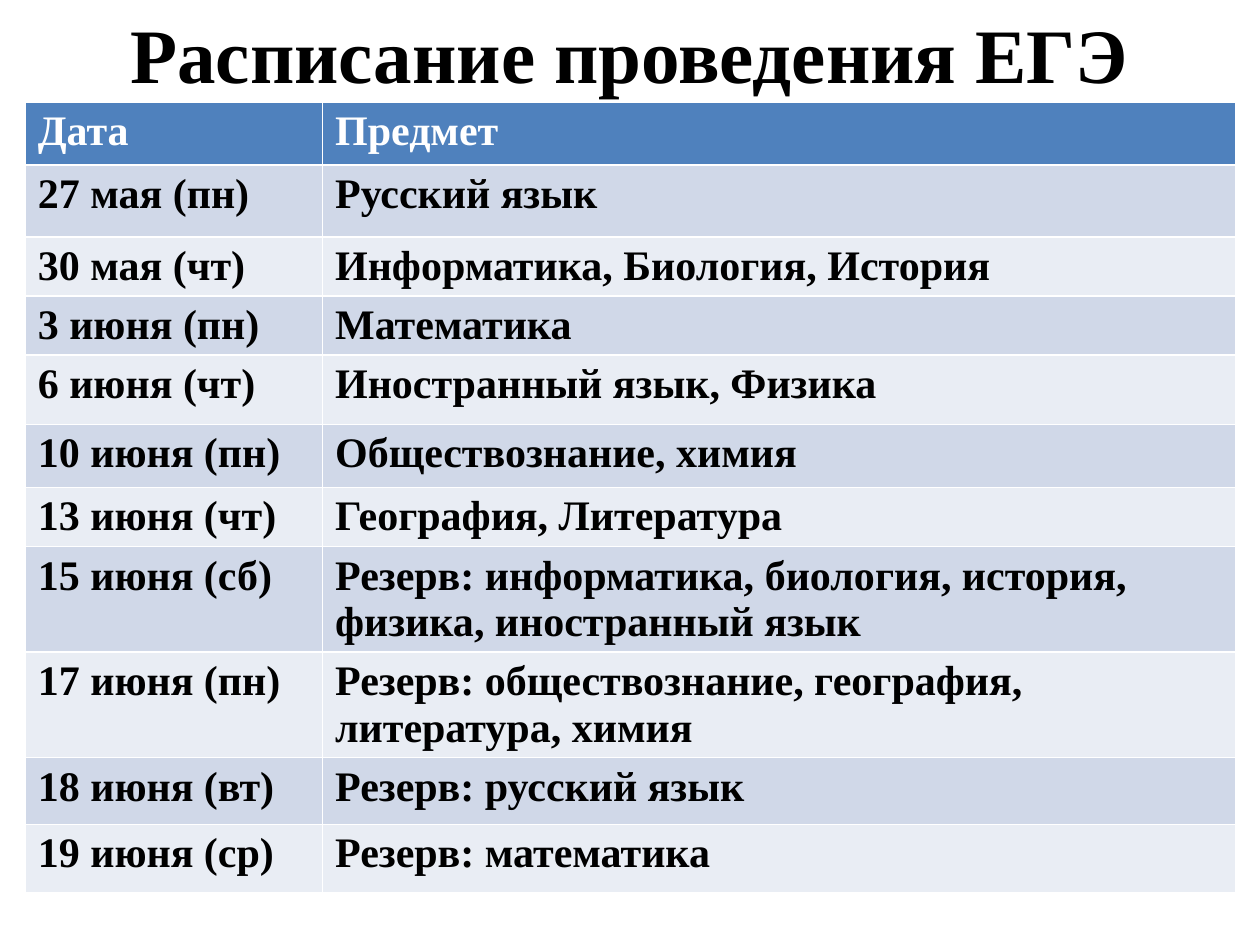
from typing import NamedTuple

from pptx import Presentation
from pptx.dml.color import RGBColor
from pptx.enum.text import MSO_ANCHOR, PP_ALIGN
from pptx.util import Inches, Pt

BLACK = RGBColor(0x00, 0x00, 0x00)
WHITE = RGBColor(0xFF, 0xFF, 0xFF)
BLUE = RGBColor(0x4F, 0x81, 0xBD)
BANDS = (RGBColor(0xE9, 0xED, 0xF4), RGBColor(0xD0, 0xD8, 0xE8))
FACE = {"name": "Times New Roman", "bold": True}


class Exam(NamedTuple):
    date: str
    subject: str
    height: float


EXAMS = [
    Exam("Дата", "Предмет", 0.5),
    Exam("27 мая (пн)", "Русский язык", 0.57),
    Exam("30 мая (чт)", "Информатика, Биология, История", 0.42),
    Exam("3 июня (пн)", "Математика", 0.46),
    Exam("6 июня (чт)", "Иностранный язык, Физика", 0.55),
    Exam("10 июня (пн)", "Обществознание, химия", 0.5),
    Exam("13 июня (чт)", "География, Литература", 0.47),
    Exam("15 июня (сб)",
         "Резерв: информатика, биология, история, физика, иностранный язык", 0.62),
    Exam("17 июня (пн)", "Резерв: обществознание, география, литература, химия", 0.62),
    Exam("18 июня (вт)", "Резерв: русский язык", 0.53),
    Exam("19 июня (ср)", "Резерв: математика", 0.54),
]
WIDTHS = (2.36, 7.25)


def write(frame, text: str, size: int, color: RGBColor) -> None:
    frame.text = text
    font = frame.paragraphs[0].runs[0].font
    for key, value in {**FACE, "size": Pt(size)}.items():
        setattr(font, key, value)
    font.color.rgb = color


def add_title(slide, text: str) -> None:
    title = slide.shapes.title
    place = {"left": 0.5, "top": 0, "width": 9, "height": 0.84}
    for key, value in place.items():
        setattr(title, key, Inches(value))
    frame = title.text_frame
    write(frame, text, 44, BLACK)
    frame.vertical_anchor = MSO_ANCHOR.MIDDLE
    frame.paragraphs[0].alignment = PP_ALIGN.CENTER


def add_exams(slide, exams: list[Exam]) -> None:
    """Draw the timetable; the first entry is its header row."""
    height = sum(exam.height for exam in exams)
    table = slide.shapes.add_table(
        len(exams), len(WIDTHS), Inches(0.2), Inches(0.81),
        Inches(sum(WIDTHS)), Inches(height)).table
    for column, width in zip(table.columns, WIDTHS):
        column.width = Inches(width)
    for index, (row, exam) in enumerate(zip(table.rows, exams)):
        row.height = Inches(exam.height)
        fill, ink = (BANDS[index % 2], BLACK) if index else (BLUE, WHITE)
        for cell, text in zip(row.cells, (exam.date, exam.subject)):
            cell.fill.solid()
            cell.fill.fore_color.rgb = fill
            write(cell.text_frame, text, 24, ink)


def main() -> None:
    deck = Presentation()
    deck.slide_width, deck.slide_height = Inches(10), Inches(7.5)
    slide = deck.slides.add_slide(deck.slide_layouts[5])
    add_title(slide, "Расписание проведения ЕГЭ")
    add_exams(slide, EXAMS)
    deck.save("out.pptx")


if __name__ == "__main__":
    main()
